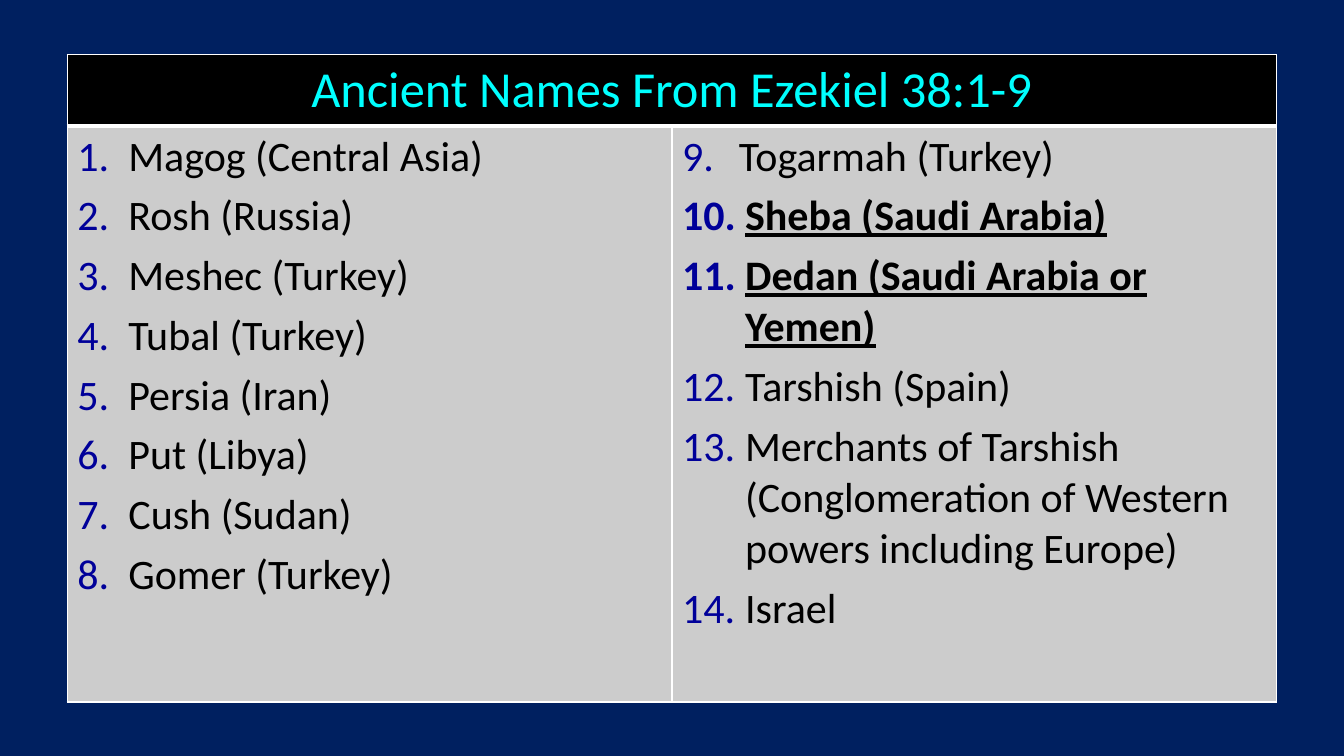
from dataclasses import dataclass

from lxml import etree
from pptx import Presentation
from pptx.dml.color import RGBColor
from pptx.enum.text import PP_ALIGN
from pptx.oxml.ns import qn
from pptx.util import Pt

CENTER = PP_ALIGN.CENTER
LEFT = PP_ALIGN.LEFT
BLANK_LAYOUT = 6


@dataclass(frozen=True)
class Theme:
    font: str = "Calibri"
    background: str = "002060"
    header_fill: str = "000000"
    header_text: str = "00FFFF"
    body_fill: str = "CCCCCC"
    body_text: str = "000000"
    number: str = "000099"
    border: str = "FFFFFF"
    header_size: int = 36
    body_size: int = 30
    thin: int = 1
    thick: int = 3


THEME = Theme()
TITLE = "Ancient Names From Ezekiel 38:1-9"
FIRST_NAMES = [
    "Magog (Central Asia)",
    "Rosh (Russia)",
    "Meshec (Turkey)",
    "Tubal (Turkey)",
    "Persia (Iran)",
    "Put (Libya)",
    "Cush (Sudan)",
    "Gomer (Turkey)",
]
LAST_NAMES = [
    "Togarmah (Turkey)",
    "Sheba (Saudi Arabia)",
    "Dedan (Saudi Arabia or Yemen)",
    "Tarshish (Spain)",
    "Merchants of Tarshish (Conglomeration of Western powers including Europe)",
    "Israel",
]
EMPHASIZED = {"Sheba (Saudi Arabia)", "Dedan (Saudi Arabia or Yemen)"}


def set_attributes(target, values):
    for name, value in values.items():
        setattr(target, name, value)


def add_element(parent, tag, **attributes):
    element = etree.SubElement(parent, qn(tag))
    for name, value in attributes.items():
        element.set(name, str(value))
    return element


def style_cell(cell, fill_color, top, bottom):
    properties = cell._tc.get_or_add_tcPr()
    widths = {"a:lnL": THEME.thin, "a:lnR": THEME.thin, "a:lnT": top, "a:lnB": bottom}
    for tag, width in widths.items():
        line = add_element(properties, tag, w=Pt(width))
        add_element(add_element(line, "a:solidFill"), "a:srgbClr", val=THEME.border)
    cell.fill.solid()
    cell.fill.fore_color.rgb = RGBColor.from_string(fill_color)


def write_text(paragraph, text, size, color, alignment, emphasized=False):
    paragraph.alignment = alignment
    run = paragraph.add_run()
    run.text = text
    set_attributes(run.font, {
        "name": THEME.font,
        "size": Pt(size),
        "bold": emphasized,
        "underline": emphasized,
    })
    run.font.color.rgb = RGBColor.from_string(color)


def number_paragraph(paragraph, start, indent):
    paragraph.space_after = Pt(6)
    properties = paragraph._p.get_or_add_pPr()
    properties.set("marL", str(Pt(indent)))
    properties.set("indent", str(-Pt(indent)))
    add_element(add_element(properties, "a:buClr"), "a:srgbClr", val=THEME.number)
    add_element(properties, "a:buFont", typeface="+mj-lt")
    add_element(properties, "a:buAutoNum", type="arabicPeriod", startAt=start)


def fill_list(cell, names, start, indents):
    frame = cell.text_frame
    for index, (name, indent) in enumerate(zip(names, indents)):
        paragraph = frame.add_paragraph() if index else frame.paragraphs[0]
        write_text(paragraph, name, THEME.body_size, THEME.body_text, LEFT, name in EMPHASIZED)
        number_paragraph(paragraph, start, indent)


def add_names_table(slide):
    table = slide.shapes.add_table(2, 2, Pt(48), Pt(38.9), Pt(864), Pt(462)).table
    for column in table.columns:
        column.width = Pt(432)
    for row, height in zip(table.rows, (50.7, 411.3)):
        row.height = Pt(height)
    for column_index in range(2):
        style_cell(table.cell(0, column_index), THEME.header_fill, THEME.thin, THEME.thick)
        style_cell(table.cell(1, column_index), THEME.body_fill, THEME.thick, THEME.thin)
    header = table.cell(0, 0)
    header.merge(table.cell(0, 1))
    write_text(header.text_frame.paragraphs[0], TITLE, THEME.header_size, THEME.header_text, CENTER)
    fill_list(table.cell(1, 0), FIRST_NAMES, 1, [36.5] * len(FIRST_NAMES))
    fill_list(table.cell(1, 1), LAST_NAMES, 9, [40.5] + [45] * (len(LAST_NAMES) - 1))


def main():
    presentation = Presentation()
    set_attributes(presentation, {"slide_width": Pt(960), "slide_height": Pt(540)})
    slide = presentation.slides.add_slide(presentation.slide_layouts[BLANK_LAYOUT])
    background = slide.background.fill
    background.solid()
    background.fore_color.rgb = RGBColor.from_string(THEME.background)
    add_names_table(slide)
    presentation.save("out.pptx")


if __name__ == "__main__":
    main()
